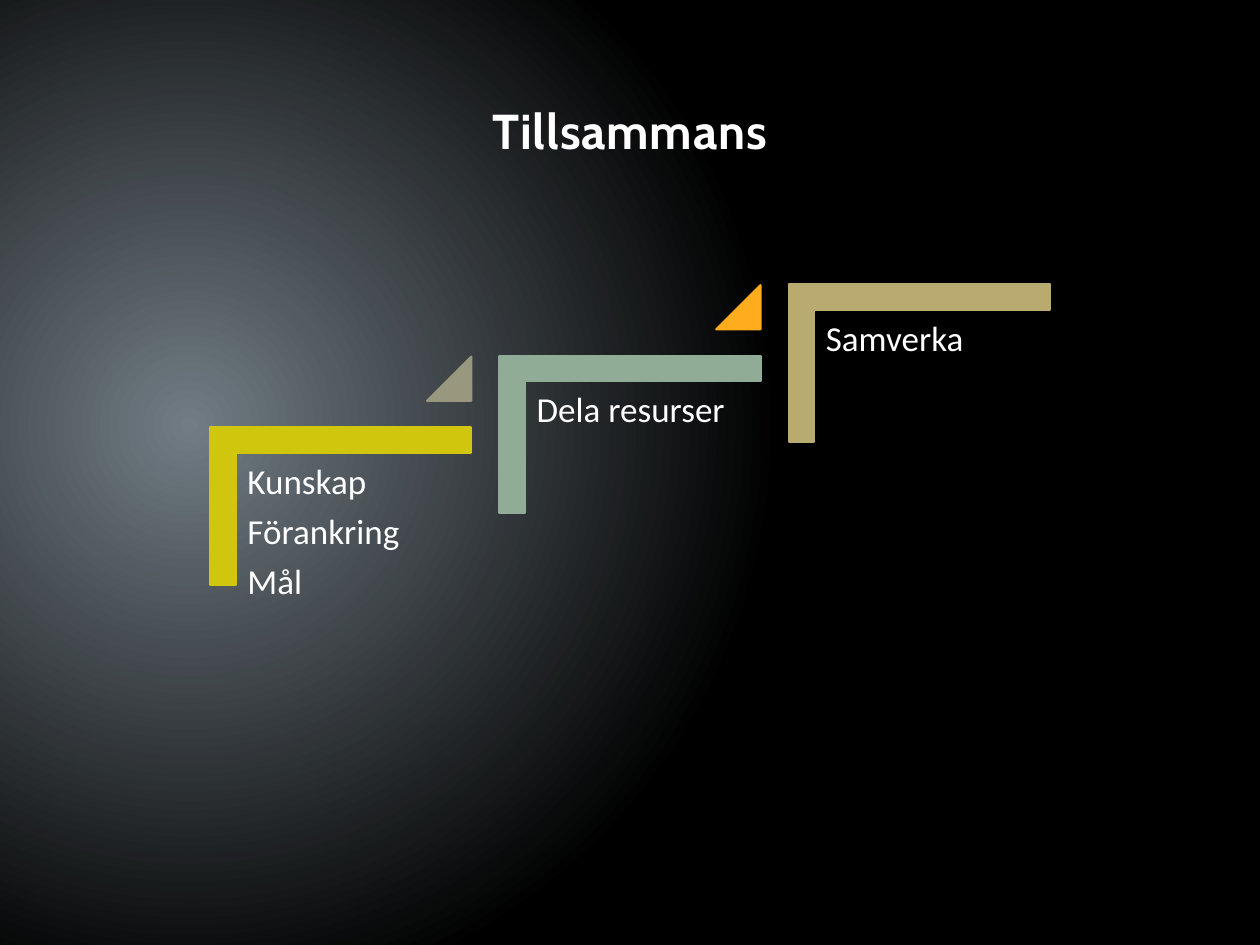
from dataclasses import dataclass

from pptx import Presentation
from pptx import util as u
from pptx.dml import color
from pptx.enum import shapes, text
from pptx.oxml import parse_xml
from pptx.oxml.ns import nsdecls


@dataclass(frozen=True)
class Theme:
    glow: str = "717C84"
    dark: str = "000000"
    title: str = "FEFEFE"
    body: str = "FFFFFF"
    head: str = "Cabin"
    font: str = "Calibri"
    big: float = 28
    size: float = 20
    line: float = 1.25


@dataclass(frozen=True)
class Box:
    left: float
    top: float
    width: float
    height: float

    def shift(self, n: int) -> "Box":
        return Box(self.left + n * RUN, self.top - n * RISE, self.width, self.height)

    def cm(self) -> list[u.Length]:
        return [u.Cm(v) for v in (self.left, self.top, self.width, self.height)]


@dataclass(frozen=True)
class Step:
    lines: tuple[str, ...]
    fill: str
    mark: str | None = None


THEME = Theme()
RUN, RISE = 5.83, 1.44
TITLE = Box(1.85, 1.27, 21.7, 2.69)
ANGLE = Box(5.28, 7.57, 3.18, 5.26)
LABEL = Box(4.78, 9.14, 4.75, 4.17)
MARK = Box(8.61, 7.19, 0.89, 0.89)
STEPS = (
    Step(("Kunskap", "Förankring", "Mål"), "CFC60D", "99987F"),
    Step(("Dela resurser",), "90AC97", "FFAD1C"),
    Step(("Samverka",), "B9AB6F"),
)


def apply(item, values: dict) -> None:
    for name, value in values.items():
        setattr(item, name, value)


def style(font, face: str, size: float, tone: str, bold: bool) -> None:
    apply(font, {"name": face, "size": u.Pt(size), "bold": bold})
    font.color.rgb = color.RGBColor.from_string(tone)


def paint(slide) -> None:
    stops = "".join(
        f'<a:gs pos="{pos}"><a:srgbClr val="{tone}"/></a:gs>'
        for pos, tone in ((0, THEME.glow), (75000, THEME.dark))
    )
    slide.element.cSld.insert(0, parse_xml(
        f'<p:bg {nsdecls("p", "a")}><p:bgPr><a:gradFill rotWithShape="1">'
        f'<a:gsLst>{stops}</a:gsLst><a:path path="circle">'
        '<a:fillToRect l="15000" t="50000" r="85000" b="60000"/></a:path>'
        '</a:gradFill><a:effectLst/></p:bgPr></p:bg>'
    ))


def draw_title(slide, words: str) -> None:
    shape = slide.shapes.title
    apply(shape, dict(zip(("left", "top", "width", "height"), TITLE.cm())))
    frame = shape.text_frame
    frame.vertical_anchor = text.MSO_ANCHOR.MIDDLE
    para = frame.paragraphs[0]
    para.alignment = text.PP_ALIGN.CENTER
    run = para.add_run()
    run.text = words
    style(run.font, THEME.head, THEME.big, THEME.title, True)
    run.font._element.set("spc", "50")


def draw_shape(group, kind, box: Box, tone: str, ratios: tuple[float, ...], turn: float = 0) -> None:
    shape = group.shapes.add_shape(kind, *box.cm())
    shape.shadow.inherit = False
    shape.rotation = turn
    for index, ratio in enumerate(ratios):
        shape.adjustments[index] = ratio
    shape.fill.solid()
    for fore in (shape.fill.fore_color, shape.line.color):
        fore.rgb = color.RGBColor.from_string(tone)
    shape.line.width = u.Pt(THEME.line)


def draw_label(group, box: Box, lines: tuple[str, ...]) -> None:
    frame = group.shapes.add_textbox(*box.cm()).text_frame
    sides = ("margin_left", "margin_top", "margin_right", "margin_bottom")
    apply(frame, {"word_wrap": True, **dict.fromkeys(sides, u.Cm(0.21))})
    for index, line in enumerate(lines):
        para = frame.add_paragraph() if index else frame.paragraphs[0]
        apply(para, {"line_spacing": 0.9, "space_after": u.Pt(0.35 * THEME.size)})
        run = para.add_run()
        run.text = line
        style(run.font, THEME.font, THEME.size, THEME.body, False)


def draw_step(group, index: int, step: Step) -> None:
    kind = shapes.MSO_SHAPE
    draw_shape(group, kind.from_xml("corner"), ANGLE.shift(index), step.fill, (0.161, 0.161), 90)
    draw_label(group, LABEL.shift(index), step.lines)
    if step.mark:
        draw_shape(group, kind.ISOSCELES_TRIANGLE, MARK.shift(index), step.mark, (1,))


def main() -> None:
    deck = Presentation()
    apply(deck, {"slide_width": u.Cm(25.4), "slide_height": u.Cm(19.05)})
    slide = deck.slides.add_slide(deck.slide_layouts[5])
    paint(slide)
    draw_title(slide, "Tillsammans")
    group = slide.shapes.add_group_shape()
    for index, step in enumerate(STEPS):
        draw_step(group, index, step)
    deck.save("out.pptx")


if __name__ == "__main__":
    main()
